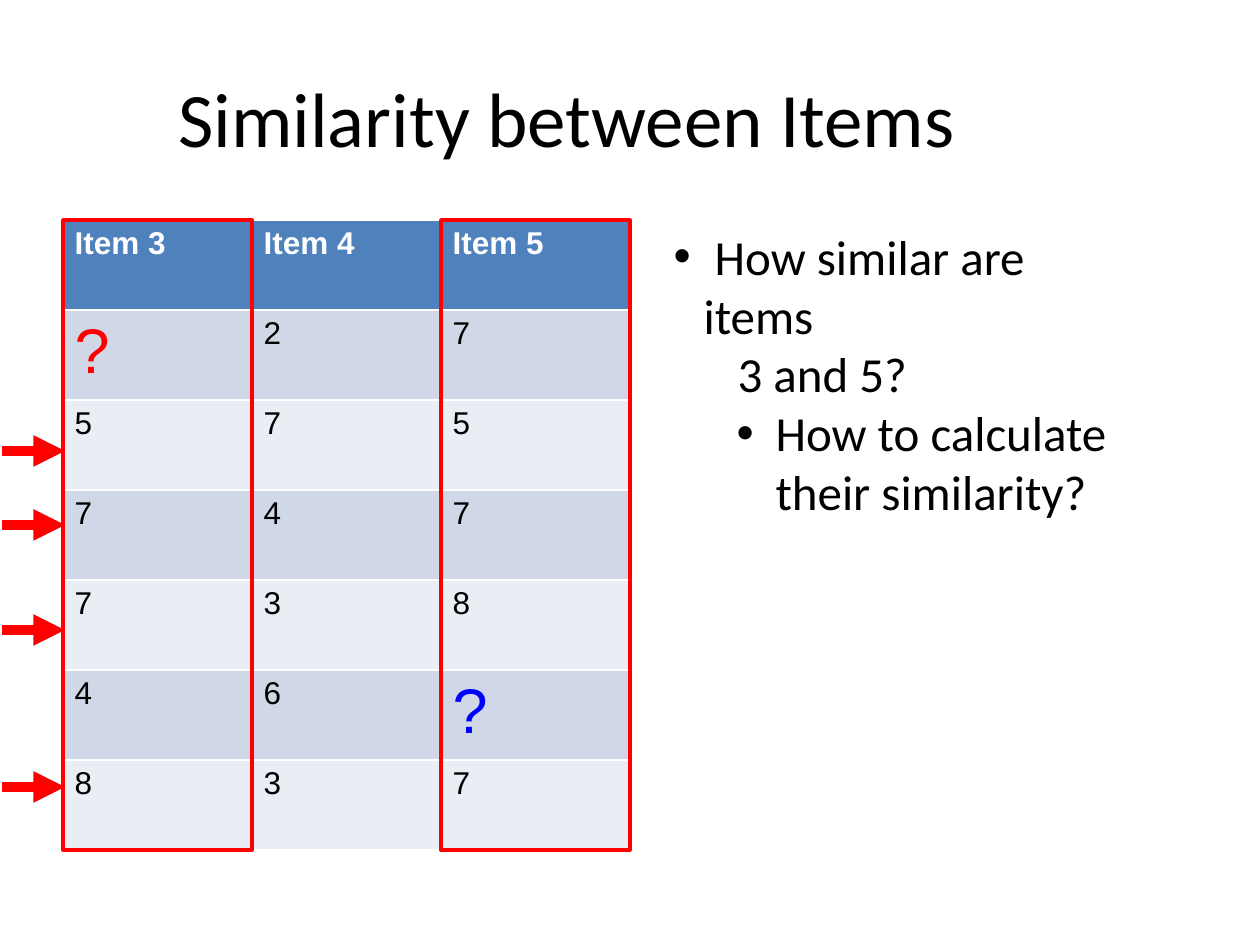
import pptx
import pptx.util
import pptx.dml.color
import pptx.enum.shapes
import pptx.enum.text
import pptx.oxml
import pptx.oxml.ns
import lxml.etree

PX_PER_INCH = 126
BLACK, WHITE, RED, BLUE = "000000", "FFFFFF", "FF0000", "0000FF"
HEADER_FILL, BAND_FILLS = "4F81BD", ("D0D8E8", "E9EDF4")

# Rating grid
GRID_LEFT, GRID_TOP, COLUMN_WIDTH, ROW_HEIGHT = 62, 220, 189, 90
RATINGS = [
    ["Item 3", "Item 4", "Item 5"],
    ["?", "2", "7"],
    ["5", "7", "5"],
    ["7", "4", "7"],
    ["7", "3", "8"],
    ["4", "6", "?"],
    ["8", "3", "7"],
]
UNKNOWN_COLOURS = {0: RED, 2: BLUE}
COMPARED_COLUMNS = (0, 2)
SHARED_ROW_MARKS = (451, 525, 630, 787)

# Questions: text, left margin, first-line indent, bulleted
QUESTIONS = [
    (" How similar are items", 30, -30, True),
    ("3 and 5?", 64, 0, False),
    ("How to calculate\vtheir similarity?", 102, -39, True),
]


def px(length):
    return pptx.util.Emu(round(length * 914400 / PX_PER_INCH))


def colour(hex_code):
    return pptx.dml.color.RGBColor.from_string(hex_code)


def place(shape, left, top, width, height):
    shape.left, shape.top = px(left), px(top)
    shape.width, shape.height = px(width), px(height)


def format_runs(paragraph, font_name, size, hex_code, bold=False):
    for run in paragraph.runs:
        run.font.name = font_name
        run.font.size = pptx.util.Pt(size)
        run.font.bold = bold
        run.font.color.rgb = colour(hex_code)


def set_bullet(paragraph, margin, indent, bulleted):
    properties = paragraph._p.get_or_add_pPr()
    properties.set("marL", str(px(margin)))
    properties.set("indent", str(px(indent)))
    qn = pptx.oxml.ns.qn
    if bulleted:
        lxml.etree.SubElement(properties, qn("a:buFont")).set("typeface", "Arial")
        lxml.etree.SubElement(properties, qn("a:buChar")).set("char", "•")
    else:
        lxml.etree.SubElement(properties, qn("a:buNone"))


def add_title(slide, wording):
    title = slide.shapes.title
    place(title, 0, 38, 1134, 157)
    title.text_frame.text = wording
    title.text_frame.vertical_anchor = pptx.enum.text.MSO_ANCHOR.MIDDLE
    heading = title.text_frame.paragraphs[0]
    heading.alignment = pptx.enum.text.PP_ALIGN.CENTER
    format_runs(heading, "Calibri", 44, BLACK)


def add_questions(slide):
    body = slide.placeholders[1]
    place(body, 661, 220, 490, 310)
    frame = body.text_frame
    frame.auto_size = pptx.enum.text.MSO_AUTO_SIZE.NONE
    frame.text = "\n".join(question[0] for question in QUESTIONS)
    for paragraph, (_, margin, indent, bulleted) in zip(frame.paragraphs, QUESTIONS):
        paragraph.space_before = pptx.util.Pt(0)
        set_bullet(paragraph, margin, indent, bulleted)
        format_runs(paragraph, "Calibri", 28, BLACK)


def add_ratings(slide):
    rows, columns = len(RATINGS), len(RATINGS[0])
    grid = slide.shapes.add_table(
        rows, columns, px(GRID_LEFT), px(GRID_TOP),
        px(columns * COLUMN_WIDTH), px(rows * ROW_HEIGHT)).table
    for r, ratings in enumerate(RATINGS):
        is_header = r == 0
        for c, rating in enumerate(ratings):
            cell = grid.cell(r, c)
            cell.text_frame.text = rating
            cell.fill.solid()
            cell.fill.fore_color.rgb = colour(
                HEADER_FILL if is_header else BAND_FILLS[(r - 1) % 2])
            size, ink = 18, WHITE if is_header else BLACK
            if rating == "?":
                size, ink = 36, UNKNOWN_COLOURS[c]
            format_runs(cell.text_frame.paragraphs[0], "Arial", size, ink, is_header)


def add_column_frame(slide, column):
    frame = slide.shapes.add_shape(
        pptx.enum.shapes.MSO_SHAPE.RECTANGLE,
        px(GRID_LEFT + 1 + column * COLUMN_WIDTH), px(GRID_TOP),
        px(COLUMN_WIDTH), px(len(RATINGS) * ROW_HEIGHT))
    frame.shadow.inherit = False
    frame.fill.background()
    frame.line.color.rgb = colour(RED)
    frame.line.width = pptx.util.Pt(2)


def add_row_arrow(slide, y):
    arrow = slide.shapes.add_connector(
        pptx.enum.shapes.MSO_CONNECTOR.STRAIGHT, px(2), px(y), px(65), px(y))
    arrow.line.color.rgb = colour(RED)
    arrow.line.width = pptx.util.Pt(6)
    qn = pptx.oxml.ns.qn
    line = arrow.line._get_or_add_ln()
    lxml.etree.SubElement(line, qn("a:tailEnd")).set("type", "triangle")
    lxml.etree.SubElement(arrow._element.spPr, qn("a:effectLst"))


def main():
    deck = pptx.Presentation()
    deck.slide_width, deck.slide_height = px(1260), px(945)
    slide = deck.slides.add_slide(deck.slide_layouts[1])

    add_title(slide, "Similarity between Items")
    add_ratings(slide)
    add_questions(slide)

    # Compared items and the rows rated for both
    for column in COMPARED_COLUMNS:
        add_column_frame(slide, column)
    for y in SHARED_ROW_MARKS:
        add_row_arrow(slide, y)

    deck.save("out.pptx")


if __name__ == "__main__":
    main()
